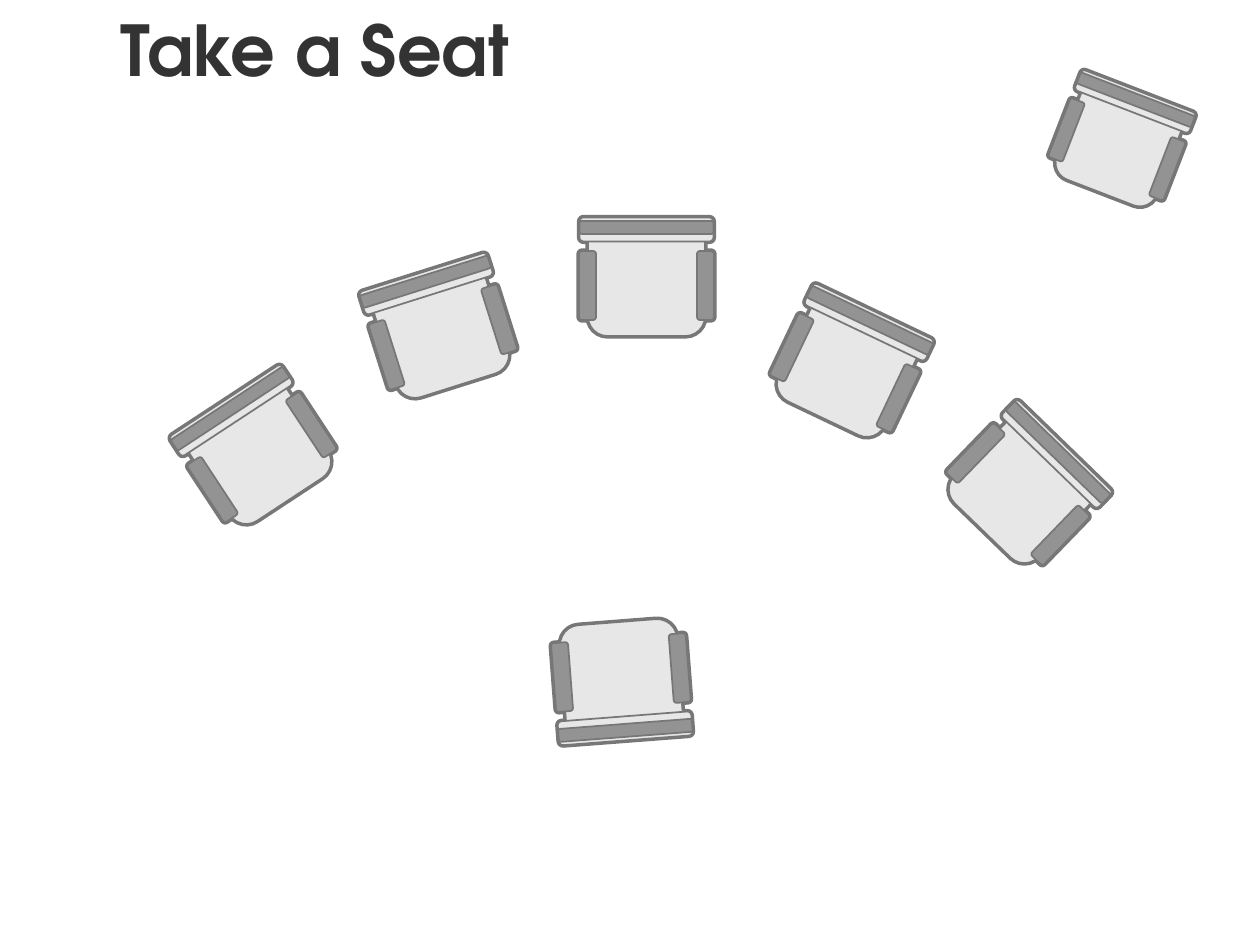
from math import cos, radians, sin

from lxml.etree import SubElement
from pptx import Presentation
from pptx.dml.color import RGBColor
from pptx.enum.shapes import MSO_SHAPE as Shape
from pptx.enum.text import MSO_AUTO_SIZE as AutoSize, PP_ALIGN as Align
from pptx.oxml import parse_xml
from pptx.oxml.ns import nsdecls, qn
from pptx.util import Emu, Inches, Pt

PX = 914400 / 126
WHITE = RGBColor(0xFF, 0xFF, 0xFF)
INK = RGBColor(0x33, 0x33, 0x33)
CUSHION = RGBColor(0xE7, 0xE7, 0xE7)
TRIM = RGBColor(0x93, 0x93, 0x93)
EDGE = RGBColor(0x77, 0x77, 0x77)
TEXT_EDGE = RGBColor(0xC4, 0xC4, 0xC4)
FONT = "TeX Gyre Adventor"

# Chair parts: centre offset from the seat centre, size, turn, fill
SEAT_SIZE = 117
FRAME = [
    (0, 0, SEAT_SIZE, SEAT_SIZE, 0, CUSHION),
    (0, -48, 134, 24, 0, CUSHION),
    (59, 8, 69, 17, 90, TRIM),
    (-59, 8, 69, 17, 90, TRIM),
]
BACK_STRIPE = (0, -50, 134, 13, 0, TRIM)

# Seat box (left, top, size) and the angle the chair is turned by
CHAIRS = [
    (199, 392, 117, 326.7),
    (790, 307, 117, 25.5),
    (588, 219, 117, 0),
    (1066, 89, 107, 21.1),
    (563, 622, 117, 175.6),
    (382, 271, 117, 342.5),
    (965, 430, 117, 44.1),
]


def px(length):
    return Emu(round(length * PX))


def add_title(slide, left, top, width, height):
    box = slide.shapes.add_textbox(px(left), px(top), px(width), px(height))
    box.fill.solid()
    box.fill.fore_color.rgb = WHITE
    frame = box.text_frame
    frame.word_wrap = True
    frame.auto_size = AutoSize.SHAPE_TO_FIT_TEXT
    frame.text = "Take a Seat"
    paragraph = frame.paragraphs[0]
    paragraph.alignment = Align.CENTER
    run = paragraph.runs[0]
    run.font.name = FONT
    run.font.size = Pt(40)
    run.font.bold = True
    run.font.color.rgb = INK
    outline = parse_xml(f'<a:ln {nsdecls("a")} w="{Pt(0.75)}"/>')
    fill = SubElement(outline, qn("a:solidFill"))
    SubElement(fill, qn("a:srgbClr"), val=str(TEXT_EDGE))
    run.font._element.insert(0, outline)


def add_chair(slide, left, top, size, angle):
    """Draw a chair turned about the centre of its square seat box."""
    group = slide.shapes.add_group_shape()
    scale = size / SEAT_SIZE
    center_x, center_y = left + size / 2, top + size / 2
    cosine, sine = cos(radians(angle)), sin(radians(angle))
    # A thick outline lies behind the same parts with a thin one
    layers = [(part, 3) for part in FRAME]
    layers += [(part, 1) for part in FRAME + [BACK_STRIPE]]
    for (dx, dy, width, height, turn, color), line_width in layers:
        part_x = center_x + scale * (dx * cosine - dy * sine)
        part_y = center_y + scale * (dx * sine + dy * cosine)
        width, height = width * scale, height * scale
        shape = group.shapes.add_shape(
            Shape.ROUNDED_RECTANGLE,
            px(part_x - width / 2), px(part_y - height / 2),
            px(width), px(height),
        )
        shape.rotation = (angle + turn) % 360
        shape.shadow.inherit = False
        shape.fill.solid()
        shape.fill.fore_color.rgb = color
        shape.line.color.rgb = EDGE
        shape.line.width = Pt(line_width)


def main():
    presentation = Presentation()
    presentation.slide_width = Inches(10)
    presentation.slide_height = Inches(7.5)
    slide = presentation.slides.add_slide(presentation.slide_layouts[6])
    add_title(slide, 0, 0, 630, 97)
    for chair in CHAIRS:
        add_chair(slide, *chair)
    presentation.save("out.pptx")


if __name__ == "__main__":
    main()
